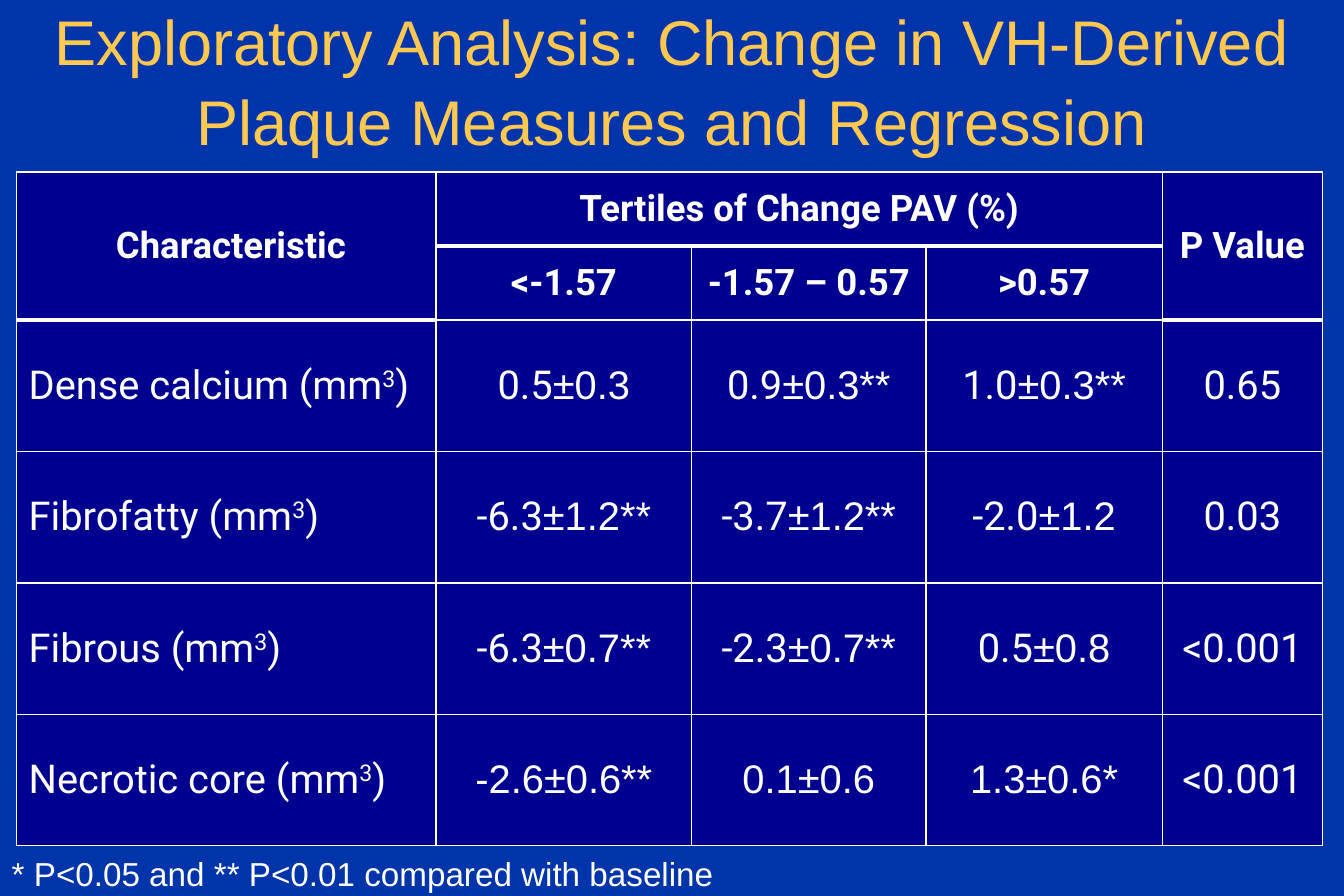
from pptx import Presentation
from pptx.dml.color import RGBColor
from pptx.enum.text import MSO_ANCHOR as Anchor, PP_ALIGN as Align
from pptx.oxml import parse_xml
from pptx.oxml.ns import nsdecls, qn
from pptx.util import Inches, Pt

COLORS = {"background": "0034AA", "title": "FFC850", "cell": "000090",
          "white": "FFFFFF", "shadow": "000000"}
COLUMN_WIDTHS = [3.51, 2.14, 1.96, 1.98, 1.34]
ROW_HEIGHTS = [0.62] * 2 + [1.1] * 4
MERGES = [((0, 0), (1, 0)), ((0, 1), (0, 3)), ((0, 4), (1, 4))]
HEADERS = [
    [" Characteristic", "Tertiles of Change PAV (%)", "", "", "P Value"],
    ["", "<-1.57", "-1.57 – 0.57", ">0.57", ""],
]
MEASURES = [
    ("Dense calcium", ["0.5±0.3", "0.9±0.3**", "1.0±0.3**"], "0.65"),
    ("Fibrofatty", ["-6.3±1.2**", "-3.7±1.2**", "-2.0±1.2"], "0.03"),
    ("Fibrous", ["-6.3±0.7**", "-2.3±0.7**", "0.5±0.8"], "<0.001"),
    ("Necrotic core", ["-2.6±0.6**", "0.1±0.6", "1.3±0.6*"], "<0.001"),
]
ALL_ARIAL = "Necrotic core"
TITLE = {"name": "Arial", "size": Pt(38)}
NOTE = {"name": "Arial", "size": Pt(20)}
HEADER = {"name": "Roboto", "size": Pt(22), "bold": True}
BODY = {"name": "Roboto", "size": Pt(24), "bold": False}
ERROR = {**BODY, "name": "Arial"}


def rgb(name):
    return RGBColor.from_string(COLORS[name])


def add_run(p, text, fmt, color="white"):
    r = p.add_run()
    r.text = text
    for name, value in fmt.items():
        setattr(r.font, name, value)
    r.font.color.rgb = rgb(color)
    return r


def add_text(s, box, text, fmt, color="white", align=Align.LEFT, anchor=Anchor.TOP):
    tf = s.shapes.add_textbox(*map(Inches, box)).text_frame
    tf.word_wrap = True
    tf.vertical_anchor = anchor
    p = tf.paragraphs[0]
    p.alignment = align
    return p, add_run(p, text, fmt, color)


def add_shadow(r):
    effect = parse_xml(
        f'<a:effectLst {nsdecls("a")}>'
        '<a:outerShdw blurRad="38100" dist="38100" dir="2700000" algn="tl">'
        f'<a:srgbClr val="{COLORS["shadow"]}"><a:alpha val="60000"/></a:srgbClr>'
        '</a:outerShdw></a:effectLst>')
    r._r.get_or_add_rPr().find(qn("a:solidFill")).addnext(effect)


def weight_below(row, col):
    return 3 if row == 0 or (row == 1 and col in (0, 4)) else 1


def style_cell(cell, row, col):
    cell.fill.solid()
    cell.fill.fore_color.rgb = rgb("cell")
    cell.vertical_anchor = Anchor.MIDDLE
    weights = {"L": 1, "R": 1, "T": weight_below(row - 1, col), "B": weight_below(row, col)}
    tcPr = cell._tc.get_or_add_tcPr()
    for i, (side, weight) in enumerate(weights.items()):
        tcPr.insert(i, parse_xml(
            f'<a:ln{side} {nsdecls("a")} w="{Pt(weight)}"><a:solidFill>'
            f'<a:srgbClr val="{COLORS["white"]}"/></a:solidFill></a:ln{side}>'))


def write_cell(cell, runs, align=Align.CENTER):
    p = cell.text_frame.paragraphs[0]
    p.alignment = align
    return [add_run(p, text, fmt) for text, fmt in runs]


def write_measure(table, row, label, changes, p_value):
    unit = [(f"{label} (mm", BODY), ("3", BODY), (")", BODY)]
    exponent = write_cell(table.cell(row, 0), unit, Align.LEFT)[1]
    exponent._r.get_or_add_rPr().set("baseline", "30000")
    for col, change in enumerate(changes, 1):
        mean, error = change.split("±")
        mean_fmt = ERROR if label == ALL_ARIAL else BODY
        write_cell(table.cell(row, col), [(mean, mean_fmt), (f"±{error}", ERROR)])
    write_cell(table.cell(row, 4), [(p_value, BODY)])


def add_measures_table(s):
    size = sum(COLUMN_WIDTHS), sum(ROW_HEIGHTS)
    table = s.shapes.add_table(len(ROW_HEIGHTS), len(COLUMN_WIDTHS),
                               *map(Inches, (0.14, 1.44, *size))).table
    table.first_row = table.horz_banding = False
    for column, width in zip(table.columns, COLUMN_WIDTHS):
        column.width = Inches(width)
    for i, height in enumerate(ROW_HEIGHTS):
        table.rows[i].height = Inches(height)
        for j in range(len(COLUMN_WIDTHS)):
            style_cell(table.cell(i, j), i, j)
    for first, last in MERGES:
        table.cell(*first).merge(table.cell(*last))
    for i, texts in enumerate(HEADERS):
        for j, text in enumerate(texts):
            if text:
                write_cell(table.cell(i, j), [(text, HEADER)])
    for i, measure in enumerate(MEASURES, len(HEADERS)):
        write_measure(table, i, *measure)


def main():
    prs = Presentation()
    prs.slide_width, prs.slide_height = Inches(11.25), Inches(7.5)
    s = prs.slides.add_slide(prs.slide_layouts[6])
    s.background.fill.solid()
    s.background.fill.fore_color.rgb = rgb("background")
    p, r = add_text(s, (0, 0.03, 11.25, 1.25),
                    "Exploratory Analysis: Change in VH-Derived Plaque Measures and Regression",
                    TITLE, "title", Align.CENTER, Anchor.MIDDLE)
    p.line_spacing = 1.05
    add_shadow(r)
    add_measures_table(s)
    add_text(s, (0, 7.09, 10.93, 0.41),
             "* P<0.05 and ** P<0.01 compared with baseline", NOTE)
    prs.save("out.pptx")


if __name__ == "__main__":
    main()
